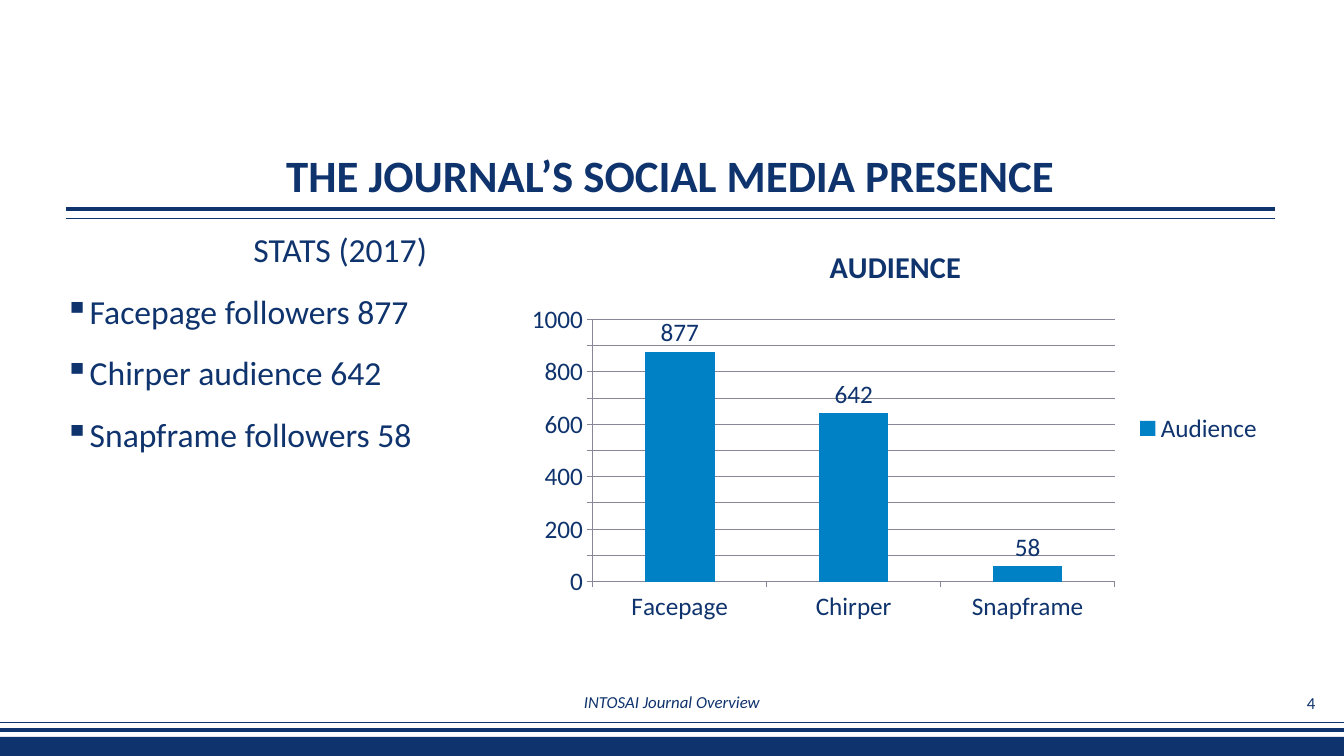
from dataclasses import dataclass

from lxml import etree
from pptx import Presentation
from pptx.chart.data import CategoryChartData
from pptx.dml.color import RGBColor
from pptx.enum import chart as ch, shapes, text
from pptx.oxml.ns import qn
from pptx.util import Inches, Pt

NAVY = RGBColor(0x0F, 0x33, 0x6D)
BLUE = RGBColor(0x00, 0x80, 0xC5)
GREY = RGBColor(0x87, 0x87, 0x97)
FONT = "Calibri"
WIDTH, HEIGHT = 13.33, 7.5


@dataclass
class Rule:
    left: float
    right: float
    y: float
    weight: float


@dataclass
class Label:
    content: str
    left: float
    top: float
    width: float
    height: float
    size: float
    anchor: text.MSO_ANCHOR = text.MSO_ANCHOR.MIDDLE
    align: text.PP_ALIGN = text.PP_ALIGN.CENTER
    bold: bool = False
    italic: bool = False
    spacing: float = 1.0


RULES = [
    Rule(0, WIDTH, 7.24, 3),
    Rule(0, WIDTH, 7.17, 1),
    Rule(0.65, 12.65, 2.07, 3),
    Rule(0.65, 12.65, 2.17, 1),
]
TITLE = Label("THE JOURNAL’S SOCIAL MEDIA PRESENCE", 0.65, 0.86, 12, 1.2, 32,
              anchor=text.MSO_ANCHOR.BOTTOM, bold=True, spacing=0.9)
STATS = Label("STATS (2017)\nFacepage followers 877\nChirper audience 642\n"
              "Snapframe followers 58", 0.64, 2.27, 5.47, 4.47, 24,
              anchor=text.MSO_ANCHOR.TOP, align=text.PP_ALIGN.LEFT, spacing=0.9)
PAGE_NUMBER = Label("4", 12.68, 6.77, 0.65, 0.4, 12)
FOOTER = Label("INTOSAI Journal Overview", 0, 6.76, WIDTH, 0.4, 12, italic=True)
AUDIENCE = {"Facepage": 877, "Chirper": 642, "Snapframe": 58}


def add_rule(s, rule: Rule) -> None:
    line = s.shapes.add_connector(
        shapes.MSO_CONNECTOR.STRAIGHT, Inches(rule.left), Inches(rule.y),
        Inches(rule.right), Inches(rule.y))
    line.line.color.rgb = NAVY
    line.line.width = Pt(rule.weight)
    etree.SubElement(line._element.spPr, qn("a:effectLst"))


def style_font(font, size: float, bold: bool = False, italic: bool = False) -> None:
    font.name, font.size = FONT, Pt(size)
    font.bold, font.italic = bold, italic
    font.color.rgb = NAVY


def add_label(s, label: Label):
    sp = s.shapes.add_textbox(Inches(label.left), Inches(label.top),
                              Inches(label.width), Inches(label.height))
    tf = sp.text_frame
    tf.word_wrap = True
    tf.margin_left = tf.margin_right = 0
    tf.vertical_anchor = label.anchor
    tf.text = label.content
    for p in tf.paragraphs:
        p.alignment = label.align
        p.line_spacing = label.spacing
        for r in p.runs:
            style_font(r.font, label.size, label.bold, label.italic)
    return tf


def add_bullet(p) -> None:
    p.space_before = Pt(18)
    pPr = p._p.get_or_add_pPr()
    pPr.set("marL", str(Inches(0.25)))
    pPr.set("indent", str(-Inches(0.25)))
    etree.SubElement(pPr, qn("a:buChar"), char="▪")


def add_bottom_band(s) -> None:
    top = 7.31
    sp = s.shapes.add_shape(shapes.MSO_SHAPE.RECTANGLE, 0, Inches(top),
                            Inches(WIDTH), Inches(HEIGHT - top))
    sp.shadow.inherit = False
    sp.fill.solid()
    sp.fill.fore_color.rgb = NAVY
    sp.line.fill.background()


def set_plot_area(chart, **fractions: float) -> None:
    """Fix the inner plot area as fractions of the chart's size."""
    plot_area = chart._chartSpace.chart.plotArea
    for old in plot_area.findall(qn("c:layout")):
        plot_area.remove(old)
    layout = etree.Element(qn("c:layout"))
    plot_area.insert(0, layout)
    manual = etree.SubElement(layout, qn("c:manualLayout"))
    settings = {"layoutTarget": "inner", "xMode": "edge", "yMode": "edge", **fractions}
    for name, value in settings.items():
        etree.SubElement(manual, qn(f"c:{name}"), val=str(value))


def add_audience_chart(s) -> None:
    data = CategoryChartData()
    data.categories = list(AUDIENCE)
    data.add_series("Audience", list(AUDIENCE.values()))
    chart = s.shapes.add_chart(
        ch.XL_CHART_TYPE.COLUMN_CLUSTERED, Inches(5.13), Inches(2.25),
        Inches(7.5), Inches(4), data).chart
    style_font(chart.font, 18)

    chart.has_title = True
    title = chart.chart_title
    title.text_frame.text = "AUDIENCE"
    title.include_in_layout = False
    style_font(title.text_frame.paragraphs[0].runs[0].font, 21.6, bold=True)

    chart.has_legend = True
    chart.legend.position = ch.XL_LEGEND_POSITION.RIGHT
    chart.legend.include_in_layout = False

    values = chart.value_axis
    values.minimum_scale, values.maximum_scale = 0, 1000
    values.major_unit = 100
    values.has_major_gridlines = True
    for line in (values.major_gridlines.format.line, values.format.line,
                 chart.category_axis.format.line):
        line.color.rgb = GREY
        line.width = Pt(0.75)
    for axis in (values, chart.category_axis):
        axis.major_tick_mark = ch.XL_TICK_MARK.OUTSIDE

    plot = chart.plots[0]
    plot.gap_width = 150
    plot.vary_by_categories = False
    series = plot.series[0]
    series.format.fill.solid()
    series.format.fill.fore_color.rgb = BLUE
    labels = series.data_labels
    labels.show_value = True
    labels.position = ch.XL_LABEL_POSITION.OUTSIDE_END
    style_font(labels.font, 18)
    set_plot_area(chart, x=0.1, y=0.23, w=0.69, h=0.65)


def main() -> None:
    prs = Presentation()
    prs.slide_width, prs.slide_height = Inches(WIDTH), Inches(HEIGHT)
    s = prs.slides.add_slide(prs.slide_layouts[6])
    add_bottom_band(s)
    for rule in RULES:
        add_rule(s, rule)
    for label in (TITLE, PAGE_NUMBER, FOOTER):
        add_label(s, label)
    heading, *items = add_label(s, STATS).paragraphs
    heading.alignment = text.PP_ALIGN.CENTER
    for item in items:
        add_bullet(item)
    add_audience_chart(s)
    prs.save("out.pptx")


if __name__ == "__main__":
    main()
